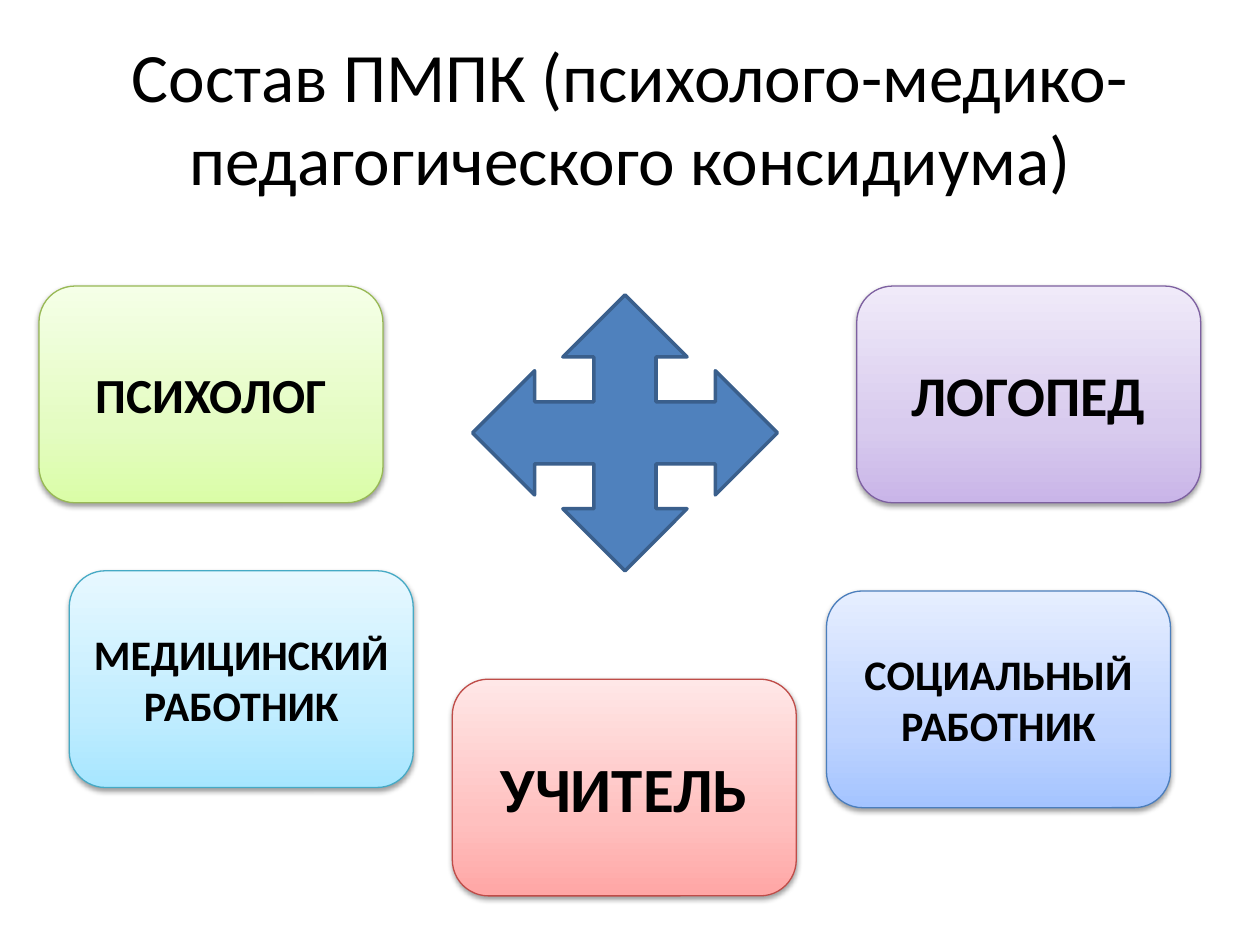
"""Build a slide showing the five members of a school support council."""
from lxml import etree
from pptx import Presentation, util as u
from pptx.dml.color import RGBColor
from pptx.enum import shapes, text
from pptx.oxml import parse_xml
from pptx.oxml.ns import nsdecls, qn

TITLE = "Состав ПМПК (психолого-медико-педагогического консидиума)"
TITLE_AREA = (0.5, 0.3, 9, 1.25)
ARROW_AREA = (3.75, 2.34, 2.42, 2.19)
CARD_SIZE = (2.73, 1.72)
MEMBERS = [
    ("ПСИХОЛОГ", (0.31, 2.27), 28, "green"),
    ("ЛОГОПЕД", (6.8, 2.27), 32, "purple"),
    ("МЕДИЦИНСКИЙ РАБОТНИК", (0.55, 4.53), 24, "aqua"),
    ("СОЦИАЛЬНЫЙ РАБОТНИК", (6.56, 4.69), 24, "blue"),
    ("УЧИТЕЛЬ", (3.59, 5.39), 36, "red"),
]
THEME = {
    "font": "Calibri",
    "ink": "000000",
    "title_size": 39.6,
    "arrow": ("4F81BD", "3A5F8C"),
    "stops": (0, 35, 100),
    "green": (("DAFDA7", "E4FCC2", "F5FFE7"), "98B955"),
    "purple": (("C9B5E8", "D8CBEE", "F0EAF9"), "7D60A0"),
    "aqua": (("A7E6FF", "C1EDFF", "E7F8FF"), "46AAC5"),
    "blue": (("A4C4FF", "BFD4FF", "E6EEFF"), "4B7EBC"),
    "red": (("FFA6A5", "FFC0BF", "FFE7E7"), "BF4C48"),
}


def write(box, words, size, bold=False):
    """Put one centred run in the middle of a box."""
    frame = box.text_frame
    frame.word_wrap = True
    frame.vertical_anchor = text.MSO_ANCHOR.MIDDLE
    para = frame.paragraphs[0]
    para.alignment = text.PP_ALIGN.CENTER
    span = para.add_run()
    span.text = words
    span.font.name = THEME["font"]
    span.font.size = u.Pt(size)
    span.font.bold = bold
    span.font.color.rgb = RGBColor.from_string(THEME["ink"])


def add_shape(page, kind, area, line, width):
    """Add an outlined preset shape without the default shadow."""
    shape = page.shapes.add_shape(kind, *map(u.Inches, area))
    shape.shadow.inherit = False
    shape.line.color.rgb = RGBColor.from_string(line)
    shape.line.width = u.Pt(width)
    return shape


def shade(card, colors):
    """Fill a card with an upward gradient and give it a soft shadow."""
    card.fill.gradient()
    card.fill.gradient_angle = 90
    properties = card._element.spPr
    stops = properties.find(".//" + qn("a:gsLst"))
    stops.clear()
    for position, color in zip(THEME["stops"], colors):
        stop = etree.SubElement(stops, qn("a:gs"), pos=str(position * 1000))
        etree.SubElement(stop, qn("a:srgbClr"), val=color)
    shadow = parse_xml(
        f'<a:outerShdw {nsdecls("a")} blurRad="{u.Pt(3.1)}" dist="{u.Pt(1.6)}" '
        'dir="5400000" rotWithShape="0"><a:srgbClr val="000000">'
        '<a:alpha val="38000"/></a:srgbClr></a:outerShdw>'
    )
    properties.find(qn("a:effectLst")).append(shadow)


def main():
    """Lay out the title, the member cards and the arrow."""
    deck = Presentation()
    deck.slide_width, deck.slide_height = u.Inches(10), u.Inches(7.5)
    page = deck.slides.add_slide(deck.slide_layouts[6])
    write(page.shapes.add_textbox(*map(u.Inches, TITLE_AREA)), TITLE, THEME["title_size"])
    for name, corner, size, tone in MEMBERS:
        colors, line = THEME[tone]
        card = add_shape(
            page, shapes.MSO_SHAPE.ROUNDED_RECTANGLE, corner + CARD_SIZE, line, 0.75
        )
        shade(card, colors)
        card.text_frame.margin_left = card.text_frame.margin_right = u.Inches(0.08)
        write(card, name, size, bold=True)
    fill, line = THEME["arrow"]
    arrow = add_shape(page, shapes.MSO_SHAPE.QUAD_ARROW, ARROW_AREA, line, 2)
    arrow.fill.solid()
    arrow.fill.fore_color.rgb = RGBColor.from_string(fill)
    deck.save("out.pptx")


if __name__ == "__main__":
    main()
